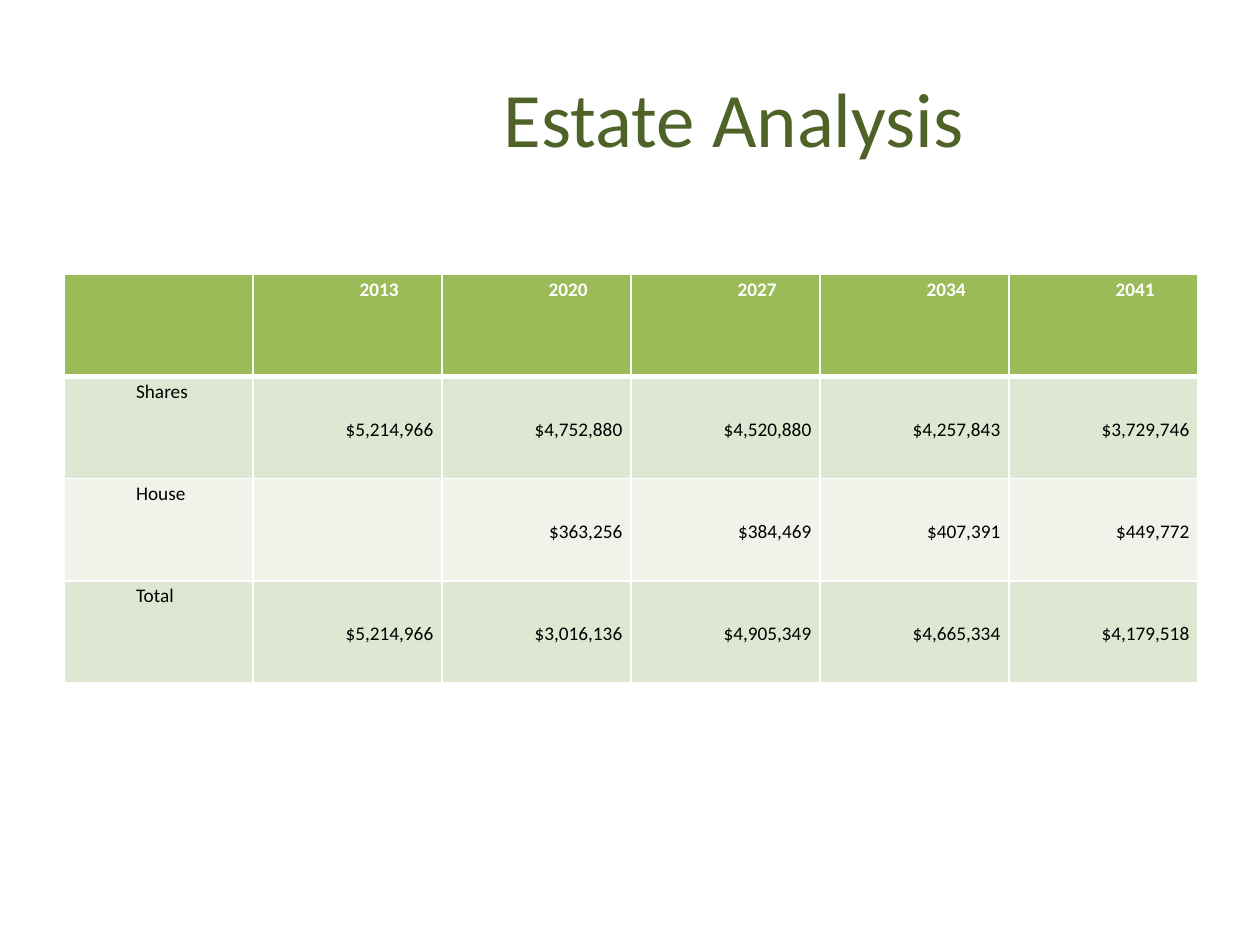
from dataclasses import dataclass

from lxml.etree import SubElement
from pptx import Presentation
from pptx.dml.color import RGBColor
from pptx.enum.text import MSO_ANCHOR as Anchor, PP_ALIGN as Align
from pptx.oxml.ns import qn
from pptx.util import Inches, Pt

FONT = "Calibri"
COLORS = {
    "title": "4F6228",
    "header": "9BBB59",
    "band_dark": "DEE7D1",
    "band_light": "EFF3EA",
    "white": "FFFFFF",
    "black": "000000",
}
ROWS = [
    ["", "2013", "2020", "2027", "2034", "2041"],
    ["Shares", "$5,214,966", "$4,752,880", "$4,520,880", "$4,257,843", "$3,729,746"],
    ["House", "", "$363,256", "$384,469", "$407,391", "$449,772"],
    ["Total", "$5,214,966", "$3,016,136", "$4,905,349", "$4,665,334", "$4,179,518"],
]
COL_WIDTH, ROW_HEIGHT = Inches(1.5), Inches(0.81)


@dataclass(frozen=True)
class CellStyle:
    fill: str
    color: str = "black"
    bold: bool = False
    align: Align = Align.LEFT
    anchor: Anchor = Anchor.TOP
    top: float = 1
    bottom: float = 1


def rgb(name: str) -> RGBColor:
    return RGBColor.from_string(COLORS[name])


def add_run(p, text: str, size: float, color: str, bold: bool = False) -> None:
    r = p.add_run()
    r.text = text
    r.font.name, r.font.size, r.font.bold = FONT, Pt(size), bold
    r.font.color.rgb = rgb(color)


def add_title(slide, text: str) -> None:
    box = slide.shapes.add_textbox(Inches(0.5), Inches(0.3), Inches(9), Inches(1.25))
    tf = box.text_frame
    tf.word_wrap = True
    tf.vertical_anchor = Anchor.MIDDLE
    tf.margin_left = Inches(1.75)
    p = tf.paragraphs[0]
    p.alignment = Align.CENTER
    add_run(p, text, 44, "title")


def set_borders(cell, style: CellStyle) -> None:
    """Draw white cell edges; the line elements must precede the fill."""
    tc_pr = cell._tc.get_or_add_tcPr()
    widths = {"lnL": 1, "lnR": 1, "lnT": style.top, "lnB": style.bottom}
    for i, (tag, width) in enumerate(widths.items()):
        ln = SubElement(tc_pr, qn(f"a:{tag}"), w=str(Pt(width)))
        fill = SubElement(ln, qn("a:solidFill"))
        SubElement(fill, qn("a:srgbClr"), val=COLORS["white"])
        tc_pr.insert(i, ln)


def style_for(row: int, col: int) -> CellStyle:
    if row == 0:
        return CellStyle("header", "white", True, Align.CENTER, bottom=3)
    fill = "band_dark" if row % 2 else "band_light"
    top = 3 if row == 1 else 1
    if col == 0:
        return CellStyle(fill, top=top)
    return CellStyle(fill, align=Align.RIGHT, anchor=Anchor.MIDDLE, top=top)


def fill_cell(cell, text: str, style: CellStyle) -> None:
    cell.fill.solid()
    cell.fill.fore_color.rgb = rgb(style.fill)
    set_borders(cell, style)
    cell.vertical_anchor = style.anchor
    cell.margin_left = cell.margin_right = Inches(0.07)
    cell.margin_top = cell.margin_bottom = 0
    if text:
        p = cell.text_frame.paragraphs[0]
        p.alignment = style.align
        p.line_spacing = 1.15
        p._p.get_or_add_pPr().set("indent", str(Inches(0.5)))
        add_run(p, text, 11, style.color, style.bold)


def add_estate_table(slide) -> None:
    n_rows, n_cols = len(ROWS), len(ROWS[0])
    table = slide.shapes.add_table(
        n_rows, n_cols, Inches(0.51), Inches(2.18), COL_WIDTH * n_cols, ROW_HEIGHT * n_rows
    ).table
    for col in table.columns:
        col.width = COL_WIDTH
    for i, values in enumerate(ROWS):
        table.rows[i].height = ROW_HEIGHT
        for j, text in enumerate(values):
            fill_cell(table.cell(i, j), text, style_for(i, j))


def main() -> None:
    prs = Presentation()
    prs.slide_width, prs.slide_height = Inches(10), Inches(7.5)
    s = prs.slides.add_slide(prs.slide_layouts[6])
    add_title(s, "Estate Analysis")
    add_estate_table(s)
    prs.save("out.pptx")


if __name__ == "__main__":
    main()
